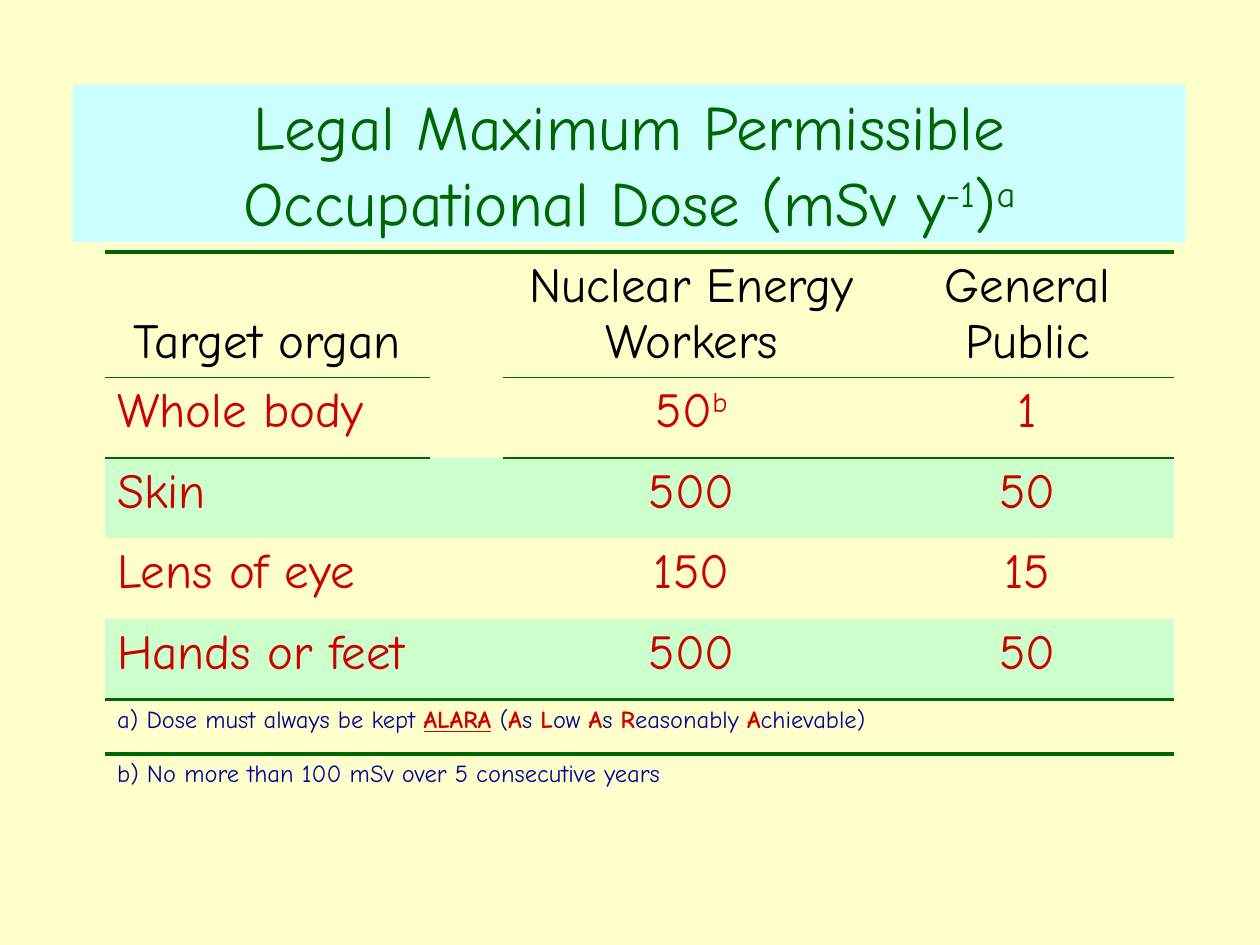
from lxml import etree
from pptx import Presentation
from pptx.dml.color import RGBColor
from pptx.enum import text
from pptx.oxml import ns
from pptx.util import Inches, Pt

CREAM = RGBColor(0xFF, 0xFF, 0xCC)
AQUA = RGBColor(0xCC, 0xFF, 0xFF)
MINT = RGBColor(0xCC, 0xFF, 0xCC)
GREEN = RGBColor(0x00, 0x66, 0x00)
BLACK = RGBColor(0x00, 0x00, 0x00)
RED = RGBColor(0xCC, 0x00, 0x00)
NAVY = RGBColor(0x00, 0x00, 0x99)
FONT = "Comic Neue"
NO_STYLE = "{2D5ABB26-0587-4C30-8999-92F81FD0307C}"
CENTER, LEFT = text.PP_ALIGN.CENTER, text.PP_ALIGN.LEFT
THICK, THIN = 2.25, 1

# Content: each text is a list of (words, extra format) spans
SUPER = {"baseline": 30000}
KEY = {"bold": True, "color": RED}
TITLE = [("Legal Maximum Permissible Occupational Dose (mSv y", {}),
         ("-1", SUPER), (")", {}), ("a", SUPER)]
HEADER = ["Target organ", "Nuclear Energy Workers", "General Public"]
DOSES = [
    ("Whole body", [("50", {}), ("b", SUPER)], "1"),
    ("Skin", "500", "50"),
    ("Lens of eye", "150", "15"),
    ("Hands or feet", "500", "50"),
]
NOTES = [
    [("a) Dose must always be kept ", {}), ("ALARA", {**KEY, "underline": True}),
     (" ", {"bold": True}), ("(", {}),
     ("A", KEY), ("s ", {}), ("L", KEY), ("ow ", {}), ("A", KEY), ("s ", {}),
     ("R", KEY), ("easonably ", {}), ("A", KEY), ("chievable)", {})],
    "b) No more than 100 mSv over 5 consecutive years",
]
COLUMNS = [2.58, 0.58, 3, 2.33]
TEXT_COLUMNS = [0, 2, 3]  # column 1 is a gap
ROWS = [0.64] * (1 + len(DOSES)) + [0.43, 0.42]


def write(frame, spans, size, color, align):
    para = frame.paragraphs[0]
    para.alignment = align
    if isinstance(spans, str):
        spans = [(spans, {})]
    for words, extra in spans:
        span = para.add_run()
        span.text = words
        look = {"name": FONT, "size": Pt(size), "bold": False, "color": color, **extra}
        span.font.color.rgb = look.pop("color")
        baseline = look.pop("baseline", None)
        for name, value in look.items():
            setattr(span.font, name, value)
        if baseline:
            span.font._element.set("baseline", str(baseline))
    return para


def write_cell(cell, spans, size, color, align):
    para = write(cell.text_frame, spans, size, color, align)
    before = etree.SubElement(para._p.get_or_add_pPr(), ns.qn("a:spcBef"))
    etree.SubElement(before, ns.qn("a:spcPct"), val="20000")


def rule(cell, side, width):
    line = etree.SubElement(cell._tc.get_or_add_tcPr(), ns.qn("a:ln" + side),
                            w=str(Pt(width)))
    fill = etree.SubElement(line, ns.qn("a:solidFill"))
    etree.SubElement(fill, ns.qn("a:srgbClr"), val=str(GREEN))


deck = Presentation()
deck.slide_width, deck.slide_height = Inches(10), Inches(7.5)
page = deck.slides.add_slide(deck.slide_layouts[5])
page.background.fill.solid()
page.background.fill.fore_color.rgb = CREAM

# Title band
title = page.shapes.title
place = {"left": 0.58, "top": 0.67, "width": 8.83, "height": 1.25}
for name, value in place.items():
    setattr(title, name, Inches(value))
title.fill.solid()
title.fill.fore_color.rgb = AQUA
frame_format = {"word_wrap": True, "auto_size": text.MSO_AUTO_SIZE.NONE,
                "vertical_anchor": text.MSO_ANCHOR.MIDDLE}
for name, value in frame_format.items():
    setattr(title.text_frame, name, value)
write(title.text_frame, TITLE, 36, GREEN, CENTER)

# Dose table
table = page.shapes.add_table(len(ROWS), len(COLUMNS), Inches(0.83), Inches(2),
                              Inches(sum(COLUMNS)), Inches(sum(ROWS))).table
table.first_row = table.horz_banding = False
table._tbl.tblPr.find(ns.qn("a:tableStyleId")).text = NO_STYLE
for column, width in zip(table.columns, COLUMNS):
    column.width = Inches(width)
for row, height in zip(table.rows, ROWS):
    row.height = Inches(height)

# Rules and stripes
last = len(DOSES)
for r in range(len(ROWS)):
    for c in range(len(COLUMNS)):
        cell = table.cell(r, c)
        if r in (0, last + 1):
            rule(cell, "T", THICK)
        if r == 1 and c in TEXT_COLUMNS:
            rule(cell, "T", THIN)
        if r == 0 and c in TEXT_COLUMNS:
            rule(cell, "B", THIN)
        if r == last:
            rule(cell, "B", THICK)
        if 0 < r <= last and r % 2 == 0:
            cell.fill.solid()
            cell.fill.fore_color.rgb = MINT
        else:
            cell.fill.background()

# Header, doses and footnotes
for c, heading in zip(TEXT_COLUMNS, HEADER):
    cell = table.cell(0, c)
    cell.vertical_anchor = text.MSO_ANCHOR.BOTTOM
    write_cell(cell, heading, 28, BLACK, CENTER)
for r, dose in enumerate(DOSES, 1):
    for c, spans in zip(TEXT_COLUMNS, dose):
        write_cell(table.cell(r, c), spans, 28, RED, CENTER if c else LEFT)
for r, note in enumerate(NOTES, last + 1):
    cell = table.cell(r, 0)
    cell.merge(table.cell(r, len(COLUMNS) - 1))
    write_cell(cell, note, 14, NAVY, LEFT)

deck.save("out.pptx")
